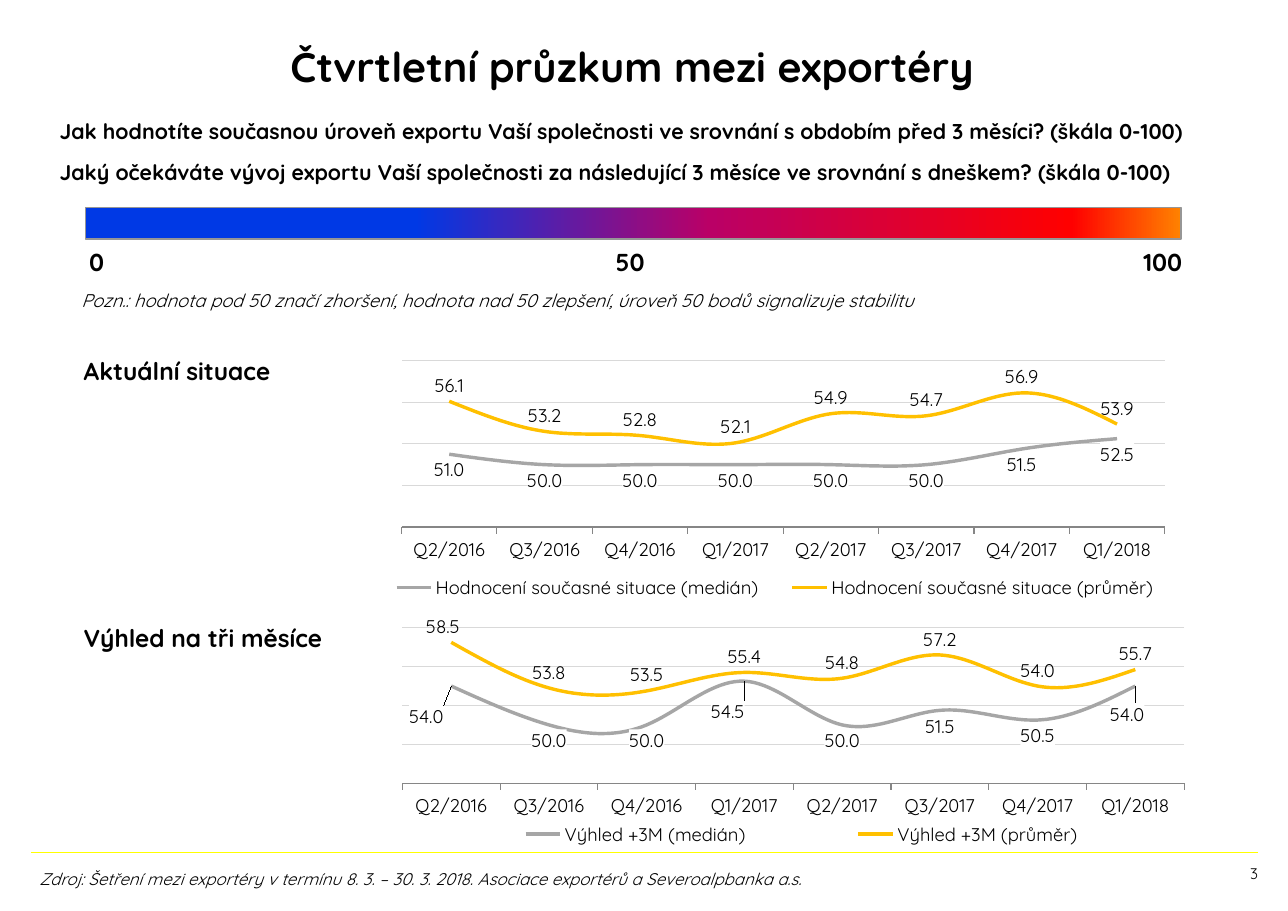
"""Build the quarterly exporter survey slide with two line charts."""
from dataclasses import dataclass, field

from lxml.etree import SubElement
from pptx import Presentation
from pptx.chart.data import CategoryChartData
from pptx.dml.color import RGBColor
from pptx.enum.chart import XL_CHART_TYPE as ChartType
from pptx.enum.chart import XL_LABEL_POSITION as LabelPosition
from pptx.enum.chart import XL_LEGEND_POSITION as LegendPosition
from pptx.enum.chart import XL_TICK_MARK as TickMark
from pptx.enum.shapes import MSO_CONNECTOR as Connector
from pptx.enum.shapes import MSO_SHAPE as Preset
from pptx.enum.text import MSO_ANCHOR as Anchor
from pptx.enum.text import MSO_AUTO_SIZE as AutoSize
from pptx.enum.text import PP_ALIGN as Align
from pptx.oxml import parse_xml
from pptx.oxml.ns import nsdecls, qn
from pptx.util import Inches, Pt

FONT = "Quicksand"
BLACK = RGBColor(0x00, 0x00, 0x00)
YELLOW = RGBColor(0xFF, 0xFF, 0x00)
GOLD = RGBColor(0xFF, 0xC0, 0x00)
GRAY = RGBColor(0xA6, 0xA6, 0xA6)
GRID_GRAY = RGBColor(0xD9, 0xD9, 0xD9)
AXIS_GRAY = RGBColor(0x86, 0x86, 0x86)
BORDER_GRAY = RGBColor(0x96, 0x96, 0x96)
SCALE_STOPS = (
    (30, RGBColor(0x00, 0x39, 0xE5)),
    (57, RGBColor(0xBA, 0x00, 0x66)),
    (90, RGBColor(0xFF, 0x00, 0x00)),
    (100, RGBColor(0xFF, 0x82, 0x00)),
)
QUARTERS = ("Q2/2016", "Q3/2016", "Q4/2016", "Q1/2017",
            "Q2/2017", "Q3/2017", "Q4/2017", "Q1/2018")
QUESTIONS = (
    "Jak hodnotíte současnou úroveň exportu Vaší společnosti ve srovnání s obdobím před 3 měsíci? (škála 0-100)",
    "Jaký očekáváte vývoj exportu Vaší společnosti za následující 3 měsíce ve srovnání s dneškem? (škála 0-100)",
)
Box = tuple[float, float, float, float]
WIDE_INSETS: Box = (0.12, 0.16, 0.12, 0)
TEXT_INSETS: Box = (0.1, 0.05, 0.1, 0.05)
NO_INSETS: Box = (0, 0, 0, 0)


@dataclass
class Label:
    text: str
    box: Box
    size: int
    insets: Box = WIDE_INSETS
    bold: bool = False
    italic: bool = False
    align: Align = Align.LEFT
    tabs: tuple[tuple[float, str], ...] = ()


@dataclass
class Trend:
    name: str
    values: tuple[float, ...]
    offsets: dict[int, tuple[float, float]] = field(default_factory=dict)


@dataclass
class Survey:
    box: Box
    plot: Box
    legend: Box
    median: Trend
    mean: Trend


LABELS = (
    Label("0\t50\t100", (0.69, 2.08, 10.73, 0.5), 16, bold=True, tabs=((4.91, "ctr"), (9.92, "r"))),
    Label("Pozn.: hodnota pod 50 značí zhoršení, hodnota nad 50 zlepšení, úroveň 50 bodů signalizuje stabilitu",
          (0.64, 2.58, 10.84, 0.3), 12, TEXT_INSETS, italic=True),
    Label("Aktuální situace", (0.64, 3.07, 2.46, 0.5), 16, bold=True),
    Label("Výhled na tři měsíce", (0.64, 5.5, 2.6, 0.5), 16, bold=True),
    Label("Zdroj: Šetření mezi exportéry v termínu 8. 3. – 30. 3. 2018. Asociace exportérů a Severoalpbanka a.s.",
          (0.26, 7.84, 9.94, 0.29), 11, TEXT_INSETS, italic=True),
    Label("3", (6.76, 7.85, 4.66, 0.3), 10, NO_INSETS, align=Align.RIGHT),
)
SURVEYS = (
    Survey((3.35, 3.07, 7.37, 2.56), (0.04, 0.08, 0.94, 0.59), (0, 0.84, 1, 0.09),
           Trend("Hodnocení současné situace (medián)", (51, 50, 50, 50, 50, 50, 51.5, 52.5)),
           Trend("Hodnocení současné situace (průměr)", (56.1, 53.2, 52.8, 52.1, 54.9, 54.7, 56.9, 53.9))),
    Survey((3.35, 5.52, 7.55, 2.24), (0.04, 0.08, 0.94, 0.63), (0.06, 0.88, 0.92, 0.1),
           Trend("Výhled +3M (medián)", (54, 50, 50, 54.5, 50, 51.5, 50.5, 54),
                 {0: (-0.03, 0.06), 3: (-0.02, 0.06), 7: (-0.01, 0.05)}),
           Trend("Výhled +3M (průměr)", (58.5, 53.8, 53.5, 55.4, 54.8, 57.2, 54, 55.7), {0: (-0.01, 0)})),
)


def style_font(font, size: float, bold: bool = False, italic: bool = False) -> None:
    font.name, font.size, font.bold, font.italic = FONT, Pt(size), bold, italic
    font.color.rgb = BLACK


def place(shape, box: Box) -> None:
    shape.left, shape.top, shape.width, shape.height = map(Inches, box)


def set_frame(frame, insets: Box) -> None:
    frame.word_wrap, frame.auto_size = True, AutoSize.NONE
    frame.margin_left, frame.margin_top, frame.margin_right, frame.margin_bottom = map(Inches, insets)


def add_label(slide, label: Label) -> None:
    frame = slide.shapes.add_textbox(*map(Inches, label.box)).text_frame
    set_frame(frame, label.insets)
    paragraph = frame.paragraphs[0]
    paragraph.text, paragraph.alignment = label.text, label.align
    if label.tabs:
        tab_list = SubElement(paragraph._p.get_or_add_pPr(), qn("a:tabLst"))
        for position, align in label.tabs:
            SubElement(tab_list, qn("a:tab"), pos=str(Inches(position)), algn=align)
    style_font(paragraph.font, label.size, label.bold, label.italic)


def fill_placeholders(slide) -> None:
    title, body = slide.shapes.title, slide.placeholders[1]
    place(title, (0.64, 0.18, 10.19, 0.83))
    title.text_frame.text = "Čtvrtletní průzkum mezi exportéry"
    set_frame(title.text_frame, NO_INSETS)
    title.text_frame.vertical_anchor = Anchor.MIDDLE
    title.text_frame.paragraphs[0].alignment = Align.CENTER
    style_font(title.text_frame.paragraphs[0].font, 27, bold=True)
    place(body, (0.42, 0.91, 10.86, 0.95))
    body.text_frame.text = "\n".join(QUESTIONS)
    set_frame(body.text_frame, WIDE_INSETS)
    for index, paragraph in enumerate(body.text_frame.paragraphs):
        properties = paragraph._p.get_or_add_pPr()
        properties.set("marL", "0")
        properties.set("indent", "0")
        SubElement(properties, qn("a:buNone"))
        paragraph.space_before = Pt(10 if index else 0)
        style_font(paragraph.font, 14, bold=True)


def add_scale(slide) -> None:
    shape = slide.shapes.add_shape(Preset.RECTANGLE, *map(Inches, (0.78, 1.88, 9.94, 0.29)))
    shape.shadow.inherit = False
    shape.fill.gradient()
    shape.fill.gradient_angle = 0
    stops = shape._element.spPr.find(".//" + qn("a:gsLst"))
    for stop in list(stops):
        stops.remove(stop)
    for percent, color in SCALE_STOPS:
        stop = SubElement(stops, qn("a:gs"), pos=str(percent * 1000))
        SubElement(stop, qn("a:srgbClr"), val=str(color))
    shape.line.color.rgb, shape.line.width = BORDER_GRAY, Pt(0.75)


def manual_layout(box: tuple[float, ...], modes: str = "") -> object:
    values = "".join(f'<c:{tag} val="{value}"/>' for tag, value in zip("xywh", box))
    return parse_xml(f'<c:layout {nsdecls("c")}><c:manualLayout>{modes}{values}</c:manualLayout></c:layout>')


EDGE_MODES = '<c:xMode val="edge"/><c:yMode val="edge"/>'


def label_series(series, trend: Trend, position: LabelPosition, white: bool) -> None:
    labels = series.data_labels
    labels.show_value, labels.position = True, position
    labels.number_format, labels.number_format_is_linked = "0.0", False
    style_font(labels.font, 12)
    for index in trend.offsets:
        point_label = series.points[index].data_label
        point_label.position = position
        style_font(point_label.font, 12)
    for element in labels._element.findall(qn("c:dLbl")):
        index = element.find(qn("c:idx"))
        number_format = parse_xml(f'<c:numFmt {nsdecls("c")} formatCode="0.0" sourceLinked="0"/>')
        index.addnext(number_format)
        index.addnext(manual_layout(trend.offsets[int(index.get("val"))]))
    if white:
        for number_format in labels._element.findall(".//" + qn("c:numFmt")):
            for old in number_format.getparent().findall(qn("c:spPr")):
                number_format.getparent().remove(old)
            number_format.addnext(parse_xml(
                f'<c:spPr {nsdecls("c", "a")}><a:solidFill><a:srgbClr val="FFFFFF"/></a:solidFill></c:spPr>'))


def add_survey(slide, survey: Survey) -> None:
    trends = (survey.median, survey.mean)
    data = CategoryChartData(number_format="0.0")
    data.categories = QUARTERS
    for trend in trends:
        data.add_series(trend.name, trend.values)
    chart = slide.shapes.add_chart(ChartType.LINE, *map(Inches, survey.box), data).chart
    style_font(chart.font, 12)
    chart.has_title, chart.has_legend = False, True
    chart.legend.position, chart.legend.include_in_layout = LegendPosition.BOTTOM, False
    legend = chart.legend._element
    plot_area = chart._chartSpace.chart.plotArea
    for parent in (legend, plot_area):
        for old in parent.findall(qn("c:layout")):
            parent.remove(old)
    legend.find(qn("c:legendPos")).addnext(manual_layout(survey.legend, EDGE_MODES))
    plot_area.insert(0, manual_layout(survey.plot, '<c:layoutTarget val="inner"/>' + EDGE_MODES))
    value_axis, category_axis = chart.value_axis, chart.category_axis
    value_axis.minimum_scale, value_axis.maximum_scale, value_axis.major_unit = 44, 60, 4
    value_axis.visible, value_axis.has_major_gridlines = False, True
    grid_line = value_axis.major_gridlines.format.line
    grid_line.color.rgb, grid_line.width = GRID_GRAY, Pt(0.5)
    category_axis.major_tick_mark = TickMark.OUTSIDE
    category_axis.format.line.color.rgb, category_axis.format.line.width = AXIS_GRAY, Pt(0.75)
    styles = ((GRAY, LabelPosition.BELOW), (GOLD, LabelPosition.ABOVE))
    for series, trend, (color, position) in zip(chart.plots[0].series, trends, styles):
        series.smooth = True
        series.format.line.color.rgb, series.format.line.width = color, Pt(2.25)
        label_series(series, trend, position, white=color == GRAY)


def main() -> None:
    presentation = Presentation()
    presentation.slide_width, presentation.slide_height = Inches(11.69), Inches(8.27)
    slide = presentation.slides.add_slide(presentation.slide_layouts[1])
    rule = slide.shapes.add_connector(Connector.STRAIGHT, *map(Inches, (0.28, 7.74, 11.42, 7.74)))
    rule.line.color.rgb, rule.line.width = YELLOW, Pt(1)
    SubElement(rule._element.spPr, qn("a:effectLst"))
    fill_placeholders(slide)
    add_scale(slide)
    for label in LABELS:
        add_label(slide, label)
    for survey in SURVEYS:
        add_survey(slide, survey)
    presentation.save("out.pptx")


if __name__ == "__main__":
    main()
